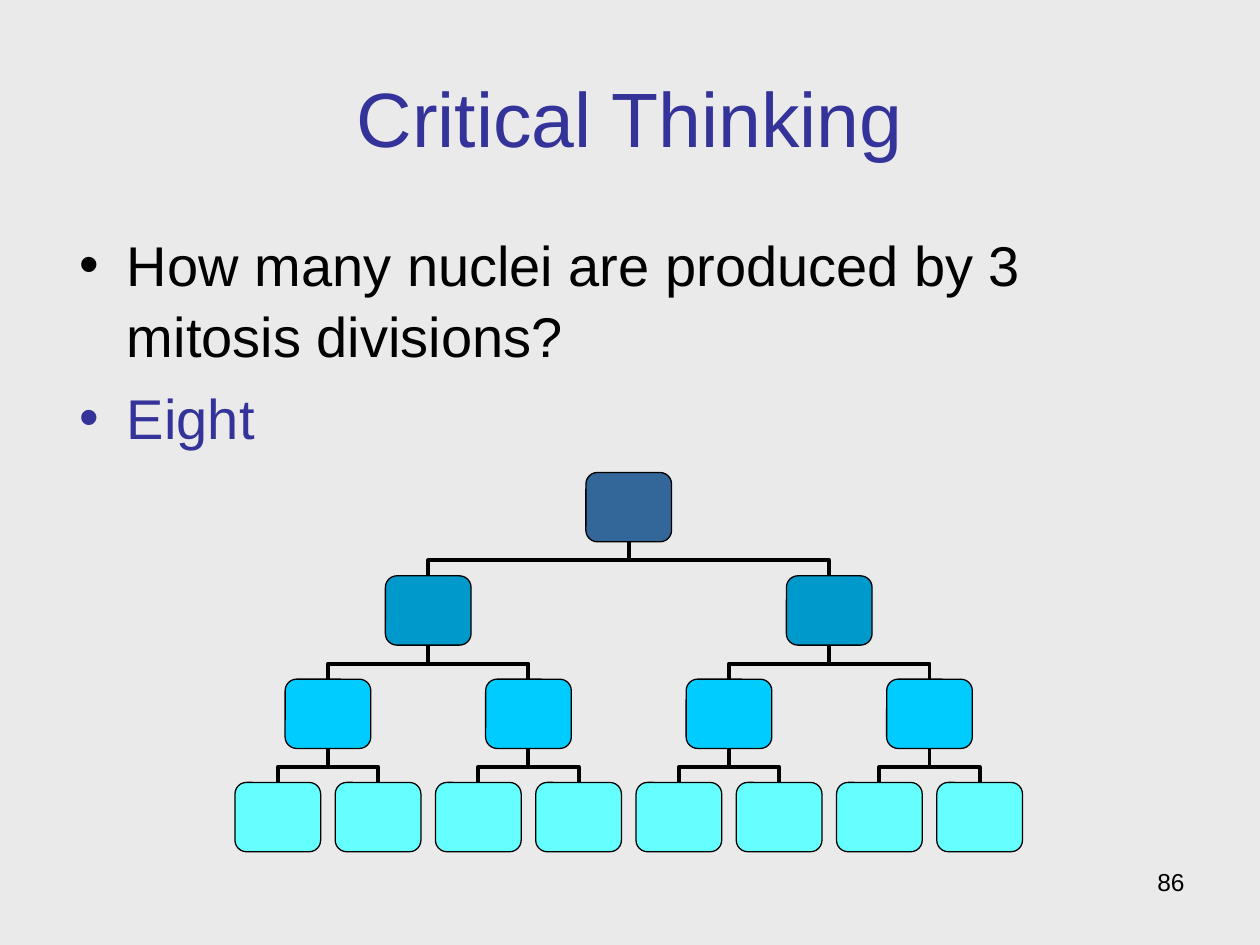
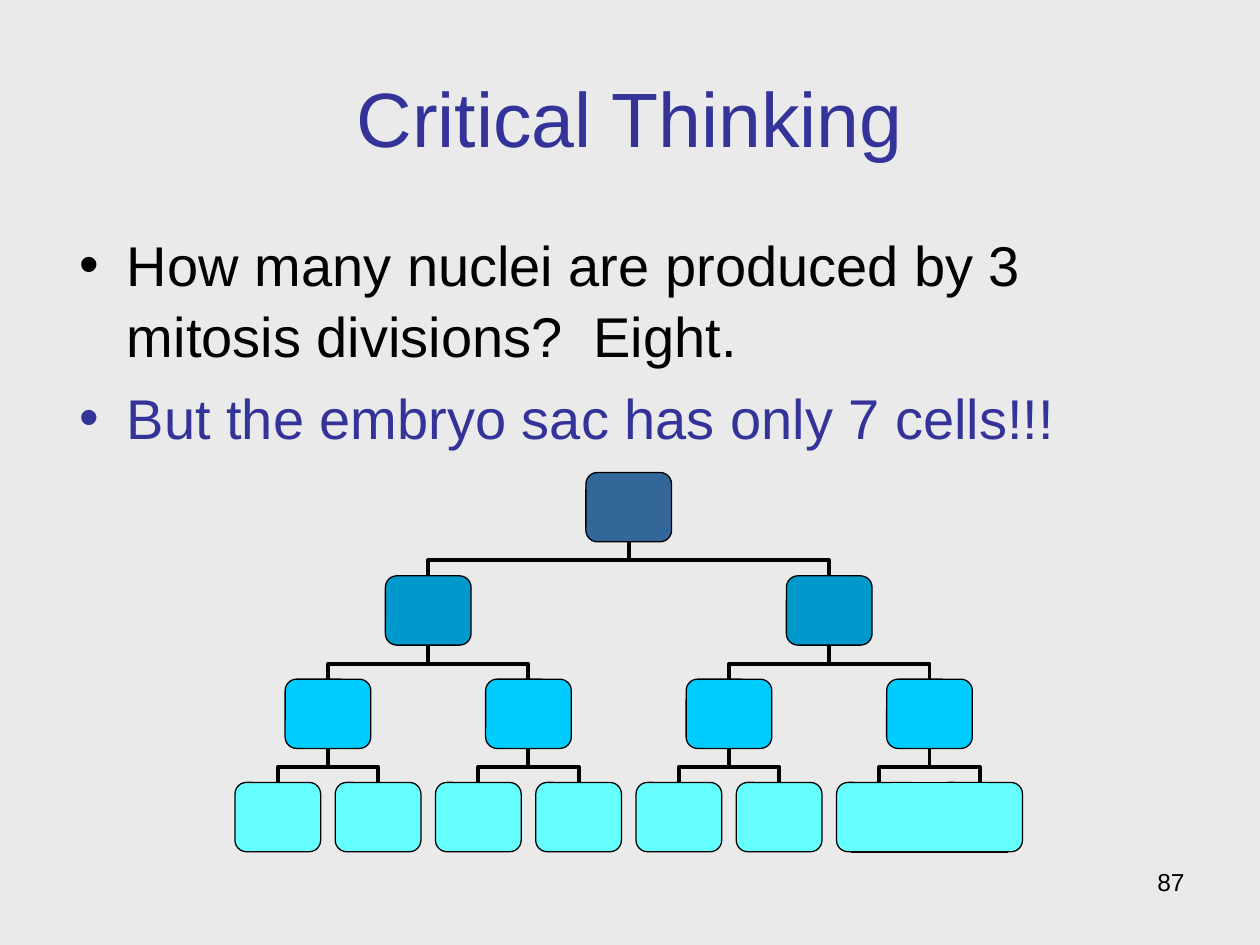
"""Build two slides that show three mitosis divisions as a tree."""
from lxml.etree import SubElement
from pptx import Presentation
from pptx.dml.color import RGBColor as Rgb
from pptx.enum.shapes import MSO_CONNECTOR as Link, MSO_SHAPE as Kind
from pptx.enum.text import MSO_ANCHOR as Anchor, PP_ALIGN as Align
from pptx.oxml.ns import qn
from pptx.util import Inches, Pt

HUES = {"back": "EAEAEA", "title": "333399", "ink": "000000",
        "row0": "336699", "row1": "0099CC", "row2": "00CCFF", "row3": "66FFFF"}
WIDE, HIGH = 10, 7.5
MID, TOP = 4.99, HIGH / 2
COL, ROW = 5.57 / 7, 0.82
BOX_W, BOX_H = 0.68, 0.55
GAP = ROW - BOX_H
ROWS = 4
PAGES = [
    ("86", "How many nuclei are produced by 3 mitosis divisions?", "Eight", False),
    ("87", "How many nuclei are produced by 3 mitosis divisions?  Eight.",
     "But the embryo sac has only 7 cells!!!", True),
]


def write(slide, lines, area, size, hues, align=Align.LEFT, anchor=Anchor.TOP, bullet=False):
    """Add a text box with one paragraph per line."""
    frame = slide.shapes.add_textbox(*map(Inches, area)).text_frame
    frame.word_wrap = True
    frame.vertical_anchor = anchor
    for i, (line, hue) in enumerate(zip(lines, hues)):
        para = frame.paragraphs[0] if i == 0 else frame.add_paragraph()
        para.alignment = align
        run = para.add_run()
        run.text = line
        run.font.name, run.font.size = "Arial", Pt(size)
        run.font.color.rgb = Rgb.from_string(HUES[hue])
        if bullet:
            para.line_spacing, para.space_before = 1.06, Pt(6)
            props = para._p.get_or_add_pPr()
            props.set("marL", str(Inches(0.38)))
            props.set("indent", str(Inches(-0.38)))
            SubElement(props, qn("a:buFont"), typeface="Arial")
            SubElement(props, qn("a:buChar"), char="•")


def join(tree, kind, ends, width):
    """Add a plain black connector between two points."""
    line = tree.add_connector(kind, *map(Inches, ends))
    line.line.color.rgb = Rgb.from_string(HUES["ink"])
    line.line.width = Pt(width)
    SubElement(line._element.spPr, qn("a:effectLst"))
    return line


deck = Presentation()
deck.slide_width, deck.slide_height = Inches(WIDE), Inches(HIGH)
spots = [[MID + ((k + 0.5) * 2 ** (ROWS - 1 - row) - 4) * COL for k in range(2 ** row)]
         for row in range(ROWS)]

for page, ask, reply, fused in PAGES:
    slide = deck.slides.add_slide(deck.slide_layouts[6])
    slide.background.fill.solid()
    slide.background.fill.fore_color.rgb = Rgb.from_string(HUES["back"])
    write(slide, [page], (7.17, 6.83, 2.33, 0.52), 14, ["ink"], align=Align.RIGHT)
    write(slide, ["Critical Thinking"], (0.5, 0.3, 9, 1.25), 44, ["title"],
          align=Align.CENTER, anchor=Anchor.MIDDLE)
    write(slide, [ask, reply], (0.53, 1.75, 9, 4.95), 32, ["ink", "title"], bullet=True)
    tree = slide.shapes.add_group_shape().shapes

    for row in range(1, ROWS):
        y = TOP + row * ROW - GAP / 2
        for k, x in enumerate(spots[row]):
            root = spots[row - 1][k // 2]
            mid, span = (x + root) / 2, abs(x - root)
            side = 1 if k % 2 else -1
            bend = join(tree, Link.ELBOW, (mid + side * GAP / 2, y - span / 2,
                                           mid - side * GAP / 2, y + span / 2), 2.25)
            bend._element.spPr.find(qn("a:xfrm")).set("rot", "5400000" if k % 2 else "16200000")
            knobs = bend._element.spPr.find(qn("a:prstGeom")).find(qn("a:avLst"))
            SubElement(knobs, qn("a:gd"), name="adj1", fmla="val 45900")

    cells = [(Kind.ROUNDED_RECTANGLE, x - BOX_W / 2, TOP + row * ROW, BOX_W, f"row{row}")
             for row in range(ROWS) for x in spots[row]]
    base = TOP + (ROWS - 1) * ROW
    if fused:
        cells.append((Kind.RECTANGLE, 7.08, base, 0.75, "row3"))
    for kind, x, y, w, hue in cells:
        cell = tree.add_shape(kind, *map(Inches, (x, y, w, BOX_H)))
        cell.shadow.inherit = False
        cell.fill.solid()
        cell.fill.fore_color.rgb = Rgb.from_string(HUES[hue])
        if kind == Kind.RECTANGLE:
            cell.line.fill.background()
        else:
            cell.line.color.rgb = Rgb.from_string(HUES["ink"])
            cell.line.width = Pt(0.75)
    if fused:
        for y in (base + BOX_H, base):
            join(tree, Link.STRAIGHT, (6.75, y, 8, y), 1)

deck.save("out.pptx")
